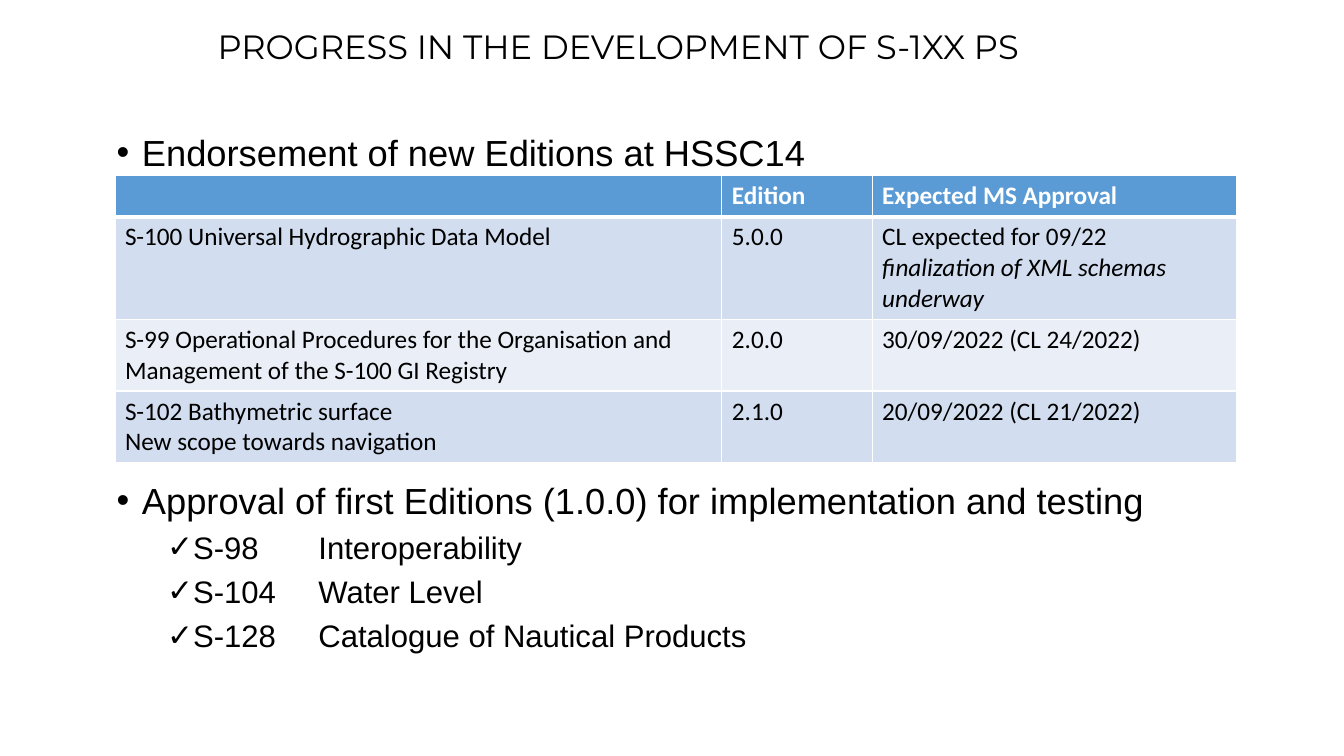
from pptx import Presentation
from pptx.dml.color import RGBColor
from pptx.enum.text import MSO_ANCHOR
from pptx.oxml.ns import qn
from pptx.util import Inches, Pt
from lxml.etree import SubElement

COLORS = {
    "text": "000000",
    "white": "FFFFFF",
    "header": "5B9BD5",
    "band_dark": "D2DEEF",
    "band_light": "EAEFF7",
}
COLUMN_WIDTHS = [6.02, 1.49, 3.62]
ROW_HEIGHTS = [0.41, 1.02, 0.71, 0.71]

# Each cell is a list of (text, italic) paragraphs
EDITIONS = [
    [[], [("Edition", False)], [("Expected MS Approval", False)]],
    [[("S-100 Universal Hydrographic Data Model", False)],
     [("5.0.0", False)],
     [("CL expected for 09/22", False),
      ("finalization of XML schemas underway", True)]],
    [[("S-99 Operational Procedures for the Organisation and "
       "Management of the S-100 GI Registry", False)],
     [("2.0.0", False)],
     [("30/09/2022 (CL 24/2022)", False)]],
    [[("S-102 Bathymetric surface", False),
      ("New scope towards navigation", False)],
     [("2.1.0", False)],
     [("20/09/2022 (CL 21/2022)", False)]],
]
FIRST_EDITIONS = [
    "S-98\tInteroperability",
    "S-104\tWater Level",
    "S-128\tCatalogue of Nautical Products",
]


def add_run(paragraph, text, size, font, color="text", bold=False, italic=False):
    run = paragraph.add_run()
    run.text = text
    run.font.size = Pt(size)
    run.font.name = font
    run.font.bold = bold
    run.font.italic = italic
    run.font.color.rgb = RGBColor.from_string(COLORS[color])


def add_text_frame(slide, left, top, width, height):
    box = slide.shapes.add_textbox(
        Inches(left), Inches(top), Inches(width), Inches(height))
    box.text_frame.word_wrap = True
    return box.text_frame


def set_bullet(paragraph, symbol, indent, tab=None):
    properties = paragraph._p.get_or_add_pPr()
    properties.set("marL", str(Inches(indent)))
    properties.set("indent", str(Inches(-0.25)))
    SubElement(properties, qn("a:buFont"), typeface="Arial")
    SubElement(properties, qn("a:buChar"), char=symbol)
    if tab:
        tabs = SubElement(properties, qn("a:tabLst"))
        SubElement(tabs, qn("a:tab"), pos=str(Inches(tab)), algn="l")


def add_title(slide, left, top, width, height):
    frame = add_text_frame(slide, left, top, width, height)
    frame.vertical_anchor = MSO_ANCHOR.MIDDLE
    paragraph = frame.paragraphs[0]
    paragraph.line_spacing = 0.9
    add_run(paragraph, "PROGRESS IN THE DEVELOPMENT OF S-1XX PS", 24, "Montserrat")


def add_bullets(slide, left, top, width, height, heading, items=()):
    frame = add_text_frame(slide, left, top, width, height)
    paragraph = frame.paragraphs[0]
    set_bullet(paragraph, "•", 0.25)
    add_run(paragraph, heading, 25.9, "Arial")
    for item in items:
        paragraph = frame.add_paragraph()
        paragraph.level = 1
        paragraph.space_before = Pt(5)
        set_bullet(paragraph, "✓", 0.75, tab=2)
        add_run(paragraph, item, 22.2, "Arial")


def set_borders(cell, bottom_width, top_width):
    properties = cell._tc.get_or_add_tcPr()
    widths = {"a:lnL": 1, "a:lnR": 1, "a:lnT": top_width, "a:lnB": bottom_width}
    for side, width in widths.items():
        line = SubElement(properties, qn(side), w=str(Pt(width)))
        fill = SubElement(line, qn("a:solidFill"))
        SubElement(fill, qn("a:srgbClr"), val=COLORS["white"])


def add_editions_table(slide, left, top):
    table = slide.shapes.add_table(
        len(ROW_HEIGHTS), len(COLUMN_WIDTHS), Inches(left), Inches(top),
        Inches(sum(COLUMN_WIDTHS)), Inches(sum(ROW_HEIGHTS))).table
    for column, width in zip(table.columns, COLUMN_WIDTHS):
        column.width = Inches(width)
    for row, height in zip(table.rows, ROW_HEIGHTS):
        row.height = Inches(height)

    for row_index, row in enumerate(EDITIONS):
        is_header = row_index == 0
        band = "band_dark" if row_index % 2 else "band_light"
        for column_index, lines in enumerate(row):
            cell = table.cell(row_index, column_index)
            set_borders(cell, bottom_width=3 if is_header else 1,
                        top_width=3 if row_index == 1 else 1)
            cell.fill.solid()
            cell.fill.fore_color.rgb = RGBColor.from_string(
                COLORS["header" if is_header else band])
            frame = cell.text_frame
            for line_index, (text, italic) in enumerate(lines):
                paragraph = frame.add_paragraph() if line_index else frame.paragraphs[0]
                add_run(paragraph, text, 18, "Calibri",
                        "white" if is_header else "text", is_header, italic)


def main():
    presentation = Presentation()
    presentation.slide_width = Inches(13.33)
    presentation.slide_height = Inches(7.5)
    slide = presentation.slides.add_slide(presentation.slide_layouts[6])

    add_title(slide, 2.06, 0, 11.27, 0.97)
    add_bullets(slide, 1.06, 1.24, 11.5, 0.5,
                "Endorsement of new Editions at HSSC14")
    add_editions_table(slide, 1.14, 1.74)
    add_bullets(slide, 1.06, 4.69, 11.5, 2.18,
                "Approval of first Editions (1.0.0) for implementation and testing",
                FIRST_EDITIONS)
    presentation.save("out.pptx")


if __name__ == "__main__":
    main()
